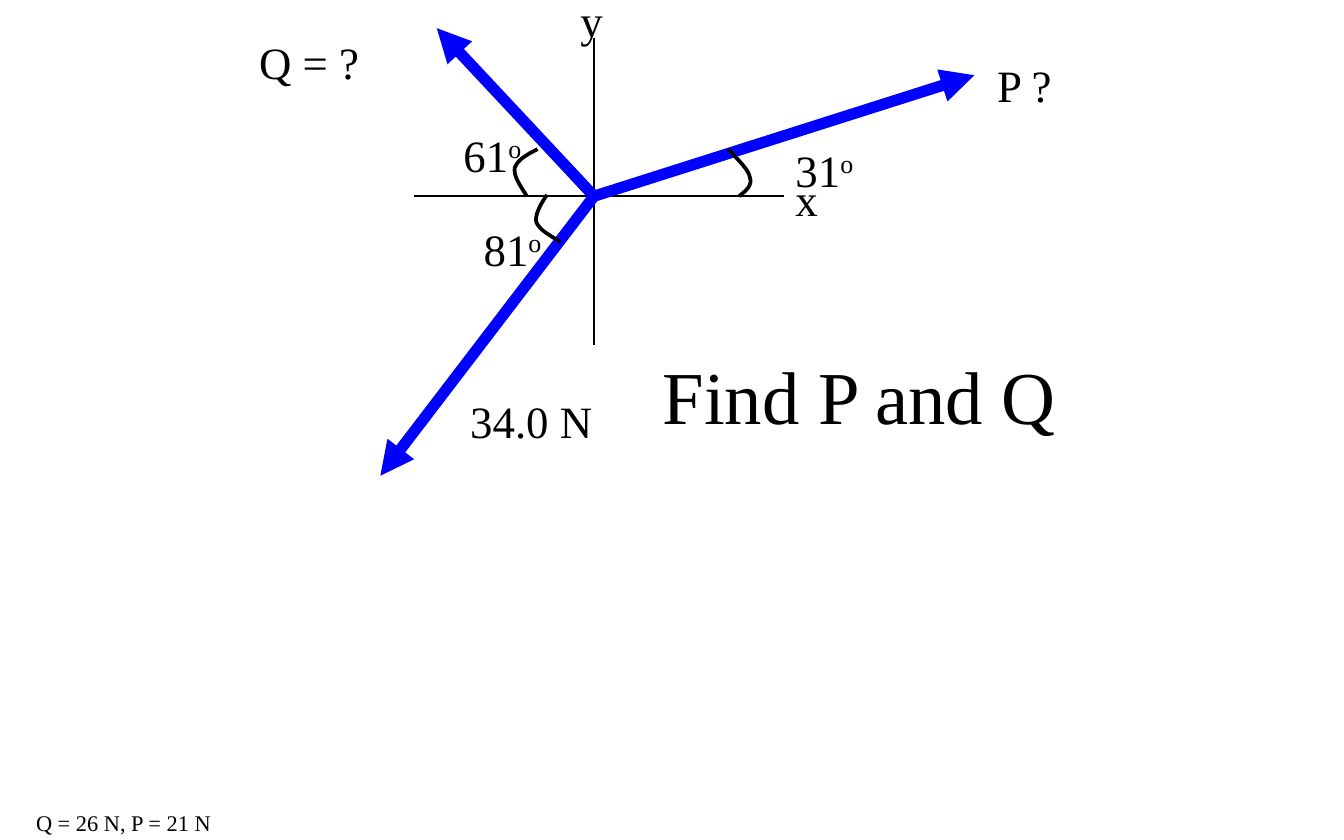
from dataclasses import dataclass

from lxml import etree
from pptx import Presentation
from pptx import util as u
from pptx.dml.color import RGBColor
from pptx.enum import shapes, text
from pptx.oxml import ns


@dataclass(frozen=True)
class Theme:
    font: str = "Times New Roman"
    ink: RGBColor = RGBColor(0, 0, 0)
    vector: RGBColor = RGBColor(0, 0, 255)
    title_size: int = 40
    label_size: int = 24
    answer_size: int = 12
    axis_width: int = 1
    arc_width: int = 2
    vector_width: int = 6


@dataclass(frozen=True)
class Box:
    left: float
    top: float
    width: float
    height: float

    def lengths(self):
        return [u.Inches(v) for v in (self.left, self.top, self.width, self.height)]


THEME = Theme()
ARC_STEPS = 12

AXES = [((0, -1.18), (0, 1.11)), ((1.41, 0), (-1.34, 0))]
VECTORS = [(2.83, -0.9), (-1.17, -1.25), (-1.59, 2.08)]
ANGLE_ARCS = [
    [(1, -0.35), (1.07, -0.27), (1.15, -0.2), (1.16, -0.14),
     (1.18, -0.08), (1.13, -0.04), (1.08, 0)],
    [(-0.42, -0.35), (-0.5, -0.31), (-0.57, -0.27), (-0.59, -0.21),
     (-0.6, -0.15), (-0.55, -0.08), (-0.5, 0)],
    [(-0.35, -0.01), (-0.4, 0.06), (-0.44, 0.14), (-0.43, 0.19),
     (-0.41, 0.25), (-0.33, 0.29), (-0.25, 0.34)],
]
LABELS = [
    ("P ?", "", 2.9, -1.08, 0.61),
    ("Q = ?", "", -2.59, -1.25, 0.95),
    ("34.0 N", "", -1.02, 1.42, 1.12),
    ("31", "o", 1.4, -0.45, 0.65),
    ("61", "o", -1.07, -0.56, 0.65),
    ("81", "o", -0.92, 0.14, 0.65),
    ("y", "", -0.2, -1.56, 0.37),
    ("x", "", 1.4, -0.23, 0.37),
]


def apply(target, values):
    for name, value in values.items():
        setattr(target, name, value)


def write(frame, content, size, superscript="", wrap=False):
    apply(frame, {
        "word_wrap": wrap,
        "auto_size": text.MSO_AUTO_SIZE.SHAPE_TO_FIT_TEXT,
        "vertical_anchor": text.MSO_ANCHOR.TOP,
    })
    paragraph = frame.paragraphs[0]
    paragraph.alignment = text.PP_ALIGN.LEFT
    for part in filter(None, (content, superscript)):
        run = paragraph.add_run()
        run.text = part
        apply(run.font, {"name": THEME.font, "size": u.Pt(size)})
        run.font.color.rgb = THEME.ink
    if superscript:
        run.font._element.set("baseline", "30000")


def add_label(slide, box, content, size, superscript=""):
    shape = slide.shapes.add_textbox(*box.lengths())
    write(shape.text_frame, content, size, superscript)


def add_line(slide, start, end, color, width, arrow=False):
    connector = slide.shapes.add_connector(
        shapes.MSO_CONNECTOR.STRAIGHT, *[u.Inches(v) for v in (*start, *end)])
    connector.line.color.rgb = color
    connector.line.width = u.Pt(width)
    if arrow:
        line = connector.line._get_or_add_ln()
        etree.SubElement(line, ns.qn("a:tailEnd"), type="triangle")
    etree.SubElement(connector._element.spPr, ns.qn("a:effectLst"))


def bezier_point(controls, t):
    weights = ((1 - t) ** 3, 3 * t * (1 - t) ** 2, 3 * t ** 2 * (1 - t), t ** 3)
    return tuple(u.Inches(sum(w * point[axis] for w, point in zip(weights, controls)))
                 for axis in (0, 1))


def add_arc(slide, controls):
    points = [bezier_point(controls[first:first + 4], step / ARC_STEPS)
              for first in (0, 3) for step in range(1, ARC_STEPS + 1)]
    builder = slide.shapes.build_freeform(*[u.Inches(v) for v in controls[0]])
    builder.add_line_segments(points, close=False)
    shape = builder.convert_to_shape()
    shape.shadow.inherit = False
    shape.fill.background()
    shape.line.color.rgb = THEME.ink
    shape.line.width = u.Pt(THEME.arc_width)


def add_title(slide, box):
    title = slide.shapes.title
    apply(title, dict(zip(("left", "top", "width", "height"), box.lengths())))
    write(title.text_frame, "Find P and Q", THEME.title_size, wrap=True)


def add_force_diagram(slide, box):
    origin = (box.left + box.width / 2, box.top + 1.46)

    def place(point):
        return origin[0] + point[0], origin[1] + point[1]

    for start, end in AXES:
        add_line(slide, place(start), place(end), THEME.ink, THEME.axis_width)
    for tip in VECTORS:
        add_line(slide, origin, place(tip), THEME.vector, THEME.vector_width, arrow=True)
    for controls in ANGLE_ARCS:
        add_arc(slide, [place(point) for point in controls])
    for content, superscript, x, y, width in LABELS:
        add_label(slide, Box(*place((x, y)), width, 0.5),
                  content, THEME.label_size, superscript)


def add_answer(slide, box):
    add_label(slide, box, "Q = 26 N, P = 21 N", THEME.answer_size)


def main():
    presentation = Presentation()
    apply(presentation, {"slide_width": u.Inches(10), "slide_height": u.Inches(6.25)})
    slide = presentation.slides.add_slide(presentation.slide_layouts[5])
    add_title(slide, Box(4.83, 2.55, 4.35, 0.77))
    add_force_diagram(slide, Box(0.92, 0, 7, 3.54))
    add_answer(slide, Box(0.17, 5.97, 1.56, 0.3))
    presentation.save("out.pptx")


if __name__ == "__main__":
    main()
